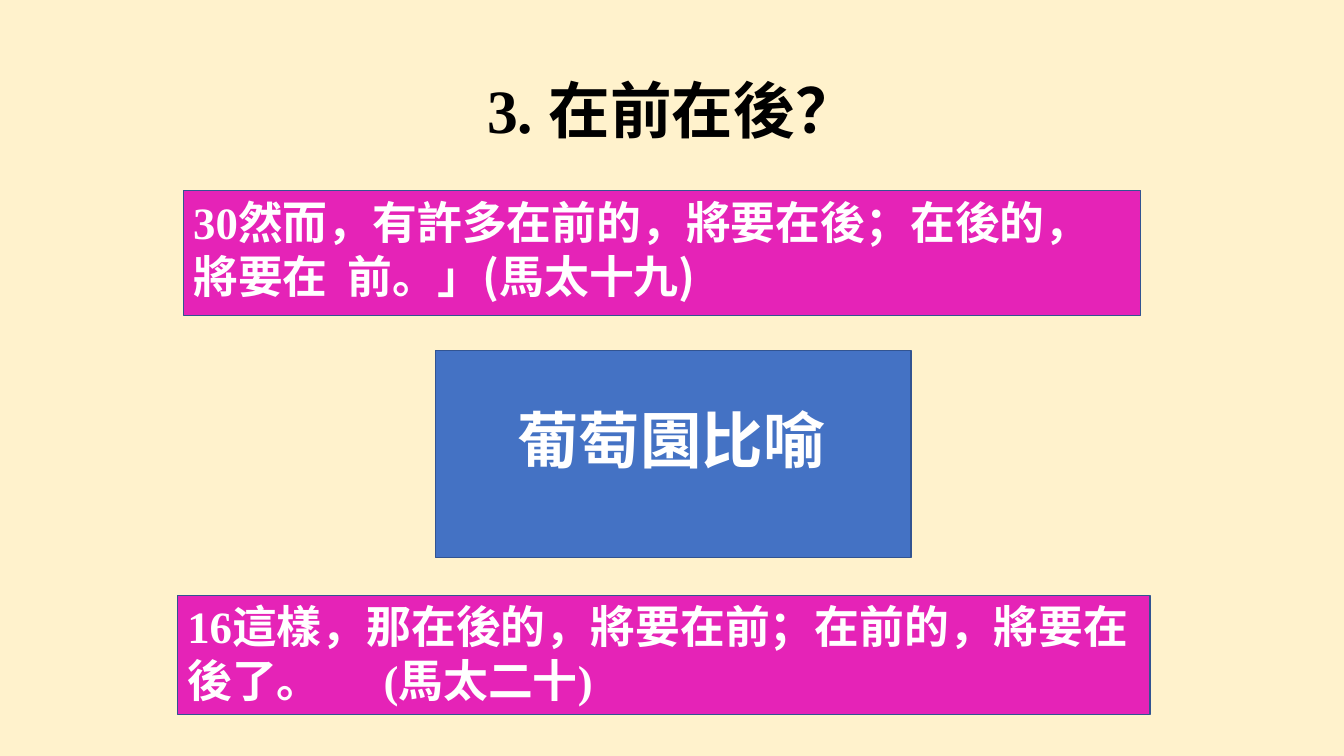
from dataclasses import dataclass

from pptx import Presentation
from pptx.dml.color import RGBColor
from pptx.enum import shapes, text
from pptx.oxml import ns
from pptx.util import Cm, Pt
from lxml import etree


@dataclass(frozen=True)
class Theme:
    background: str = "FFF2CC"
    ink: str = "000000"
    light: str = "FFFFFF"
    verse: str = "E523B7"
    parable: str = "4472C4"
    outline: str = "325491"
    heading_size: int = 44
    verse_size: int = 32
    serif: str = "Times New Roman"
    cjk: str = "Noto Sans CJK SC"


THEME = Theme()


def rgb(value):
    return RGBColor.from_string(value)


def write(tf, runs, size, color, align=text.PP_ALIGN.LEFT, tab=None, spacing=None):
    tf.word_wrap = True
    p = tf.paragraphs[0]
    p.alignment = align
    p.line_spacing = spacing
    if tab is not None:
        tabs = etree.SubElement(p._p.get_or_add_pPr(), ns.qn("a:tabLst"))
        etree.SubElement(tabs, ns.qn("a:tab"), pos=str(int(Cm(tab))), algn="l")
    for words, face in runs:
        r = p.add_run()
        r.text = words
        r.font.name = face
        r.font.size = Pt(size)
        r.font.bold = True
        r.font.color.rgb = rgb(color)
        east_asian = etree.Element(ns.qn("a:ea"), typeface=THEME.cjk)
        r.font._element.find(ns.qn("a:latin")).addnext(east_asian)


def add_title(s, box, runs):
    sp = s.shapes.title
    sp.left, sp.top, sp.width, sp.height = map(Cm, box)
    tf = sp.text_frame
    tf.auto_size = text.MSO_AUTO_SIZE.NONE
    tf.vertical_anchor = text.MSO_ANCHOR.MIDDLE
    write(tf, runs, THEME.heading_size, THEME.ink,
          align=text.PP_ALIGN.CENTER, spacing=0.9)


def add_panel(s, box, fill):
    sp = s.shapes.add_shape(shapes.MSO_SHAPE.RECTANGLE, *map(Cm, box))
    sp.shadow.inherit = False
    sp.fill.solid()
    sp.fill.fore_color.rgb = rgb(fill)
    sp.line.color.rgb = rgb(THEME.outline)
    sp.line.width = Pt(1)


def add_caption(s, box, runs, size, **style):
    tf = s.shapes.add_textbox(*map(Cm, box)).text_frame
    write(tf, runs, size, THEME.light, **style)
    tf.auto_size = text.MSO_AUTO_SIZE.SHAPE_TO_FIT_TEXT


def add_verse(s, left, top, width, height, text_top, runs, tab):
    add_panel(s, (left, top, width, height), THEME.verse)
    add_caption(s, (left, text_top, width, 3), runs, THEME.verse_size, tab=tab)


def main():
    prs = Presentation()
    prs.slide_width, prs.slide_height = Cm(33.87), Cm(19.05)
    s = prs.slides.add_slide(prs.slide_layouts[5])
    s.background.fill.solid()
    s.background.fill.fore_color.rgb = rgb(THEME.background)

    add_title(s, (2.33, 1.02, 29.21, 3.68),
              [("3. ", THEME.serif), ("在前在後？", THEME.cjk)])

    add_panel(s, (10.97, 8.84, 11.99, 5.21), THEME.parable)
    add_caption(s, (11.86, 10.01, 10.11, 2.13), [("葡萄園比喻", THEME.cjk)],
                THEME.heading_size, align=text.PP_ALIGN.CENTER)

    add_verse(s, 4.62, 4.8, 24.13, 3.15, 4.78,
              [("30", THEME.serif),
               ("然而，有許多在前的，將要在後；在後的，將要在\t前。」(馬太十九)", THEME.cjk)],
              tab=3.9)
    add_verse(s, 4.47, 15.01, 24.51, 3, 14.96,
              [("16這樣，那在後的，將要在前；在前的，將要在後了。\t(馬太二十)", THEME.serif)],
              tab=4.95)

    prs.save("out.pptx")


if __name__ == "__main__":
    main()
